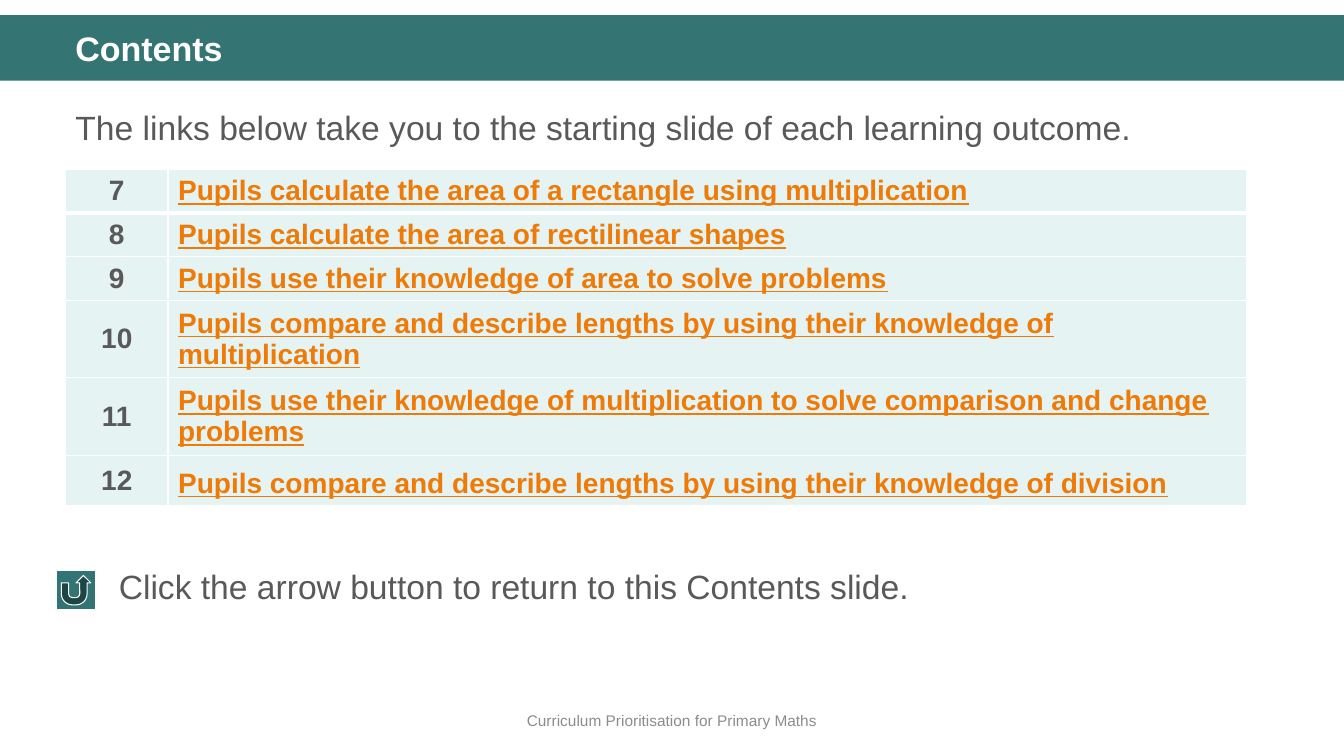
from pptx import Presentation
from pptx.dml.color import RGBColor
from pptx.enum.shapes import MSO_SHAPE as Shape
from pptx.enum.text import MSO_ANCHOR as Anchor, PP_ALIGN as Align
from pptx.oxml import parse_xml
from pptx.oxml.ns import nsdecls
from pptx.util import Inches, Pt

COLS, ROWS = 160, 90
WIDTH, HEIGHT = Inches(13.33), Inches(7.5)
WHITE, GREY, ORANGE, TEAL = "FFFFFF", "595959", "EE7B08", "347574"

GOALS = [
    (7, "Pupils calculate the area of a rectangle using multiplication", 4.92),
    (8, "Pupils calculate the area of rectilinear shapes", 4.92),
    (9, "Pupils use their knowledge of area to solve problems", 4.92),
    (10, "Pupils compare and describe lengths by using their knowledge of multiplication", 8.64),
    (11, "Pupils use their knowledge of multiplication to solve comparison and change problems", 8.64),
    (12, "Pupils compare and describe lengths by using their knowledge of division", 5.64),
]


def across(cols):
    return round(WIDTH * cols / COLS)


def down(rows):
    return round(HEIGHT * rows / ROWS)


def place(box):
    left, top, width, height = box
    return across(left), down(top), across(width), down(height)


def paint(part, color):
    part.solid()
    part.fore_color.rgb = RGBColor.from_string(color)


def style(para, size, color, bold=False, line=False, align=Align.LEFT, space=1.0):
    para.alignment = align
    para.line_spacing = space
    font = para.font
    font.name, font.size, font.bold, font.underline = "Arial", Pt(size), bold, line
    font.color.rgb = RGBColor.from_string(color)


def write(slide, box, text, size, color, anchor=Anchor.TOP, **looks):
    frame = slide.shapes.add_textbox(*place(box)).text_frame
    frame.word_wrap = True
    frame.vertical_anchor = anchor
    frame.text = text
    style(frame.paragraphs[0], size, color, **looks)


def draw(slide, kind, box, color):
    shape = slide.shapes.add_shape(kind, *place(box))
    shape.shadow.inherit = False
    paint(shape.fill, color)
    shape.line.fill.background()
    return shape


def edge(cell, thick):
    props = cell._tc.get_or_add_tcPr()
    for side, width in zip("LRTB", (1, 1, thick if thick < 0 else 1, abs(thick))):
        props.append(parse_xml(
            f'<a:ln{side} {nsdecls("a")} w="{Pt(abs(width))}"><a:solidFill>'
            f'<a:srgbClr val="{WHITE}"/></a:solidFill></a:ln{side}>'))


def header(slide, box):
    left, top, width, height = box
    draw(slide, Shape.RECTANGLE, box, TEAL)
    write(slide, (left + 7.8, top + 1.44, width - 13.84, 5.64), "Contents",
          24.3, WHITE, bold=True, space=0.9)


def goals(slide, box):
    left, top, width, height = box
    write(slide, (left, top, width, 8),
          "The links below take you to the starting slide of each learning outcome.",
          24, GREY, space=1.2)
    area = place((left, top + 9, 140.6, height - 9))
    table = slide.shapes.add_table(len(GOALS), 2, *area).table
    table.first_row = table.horz_banding = False
    for column, share in zip(table.columns, (12.2, 128.4)):
        column.width = across(share)
    for i, (number, goal, tall) in enumerate(GOALS):
        table.rows[i].height = down(tall)
        for j, text in enumerate((str(number), goal)):
            cell = table.cell(i, j)
            edge(cell, 3 if i == 0 else 1)
            paint(cell.fill, "E5F3F2")
            cell.vertical_anchor = Anchor.MIDDLE
            cell.text = text
            last = i == len(GOALS) - 1
            style(cell.text_frame.paragraphs[0], 20, ORANGE if j else GREY,
                  bold=True, line=bool(j), align=Align.LEFT if j else Align.CENTER,
                  space=1.2 if j and last else 1.0)


def back(slide, box):
    left, top, width, height = box
    button = draw(slide, Shape.ACTION_BUTTON_RETURN, (left, top + 1.08, 4.68, 4.68), "327473")
    paint(button.line.fill, WHITE)
    button.line.width = Pt(0.75)
    write(slide, (left + 6.24, top, width - 6.24, height),
          "Click the arrow button to return to this Contents slide.", 24, GREY)


def footer(slide, box):
    write(slide, box, "Curriculum Prioritisation for Primary Maths", 11, "8C8C8C",
          anchor=Anchor.MIDDLE, align=Align.CENTER)


def main():
    deck = Presentation()
    deck.slide_width, deck.slide_height = WIDTH, HEIGHT
    slide = deck.slides.add_slide(deck.slide_layouts[6])
    header(slide, (0, 1.8, COLS, 7.8))
    goals(slide, (7.8, 11.16, 146.16, 46.68))
    back(slide, (6.72, 66.84, 142.08, 6))
    footer(slide, (0, 83.4, COLS, 4.8))
    deck.save("out.pptx")


if __name__ == "__main__":
    main()
